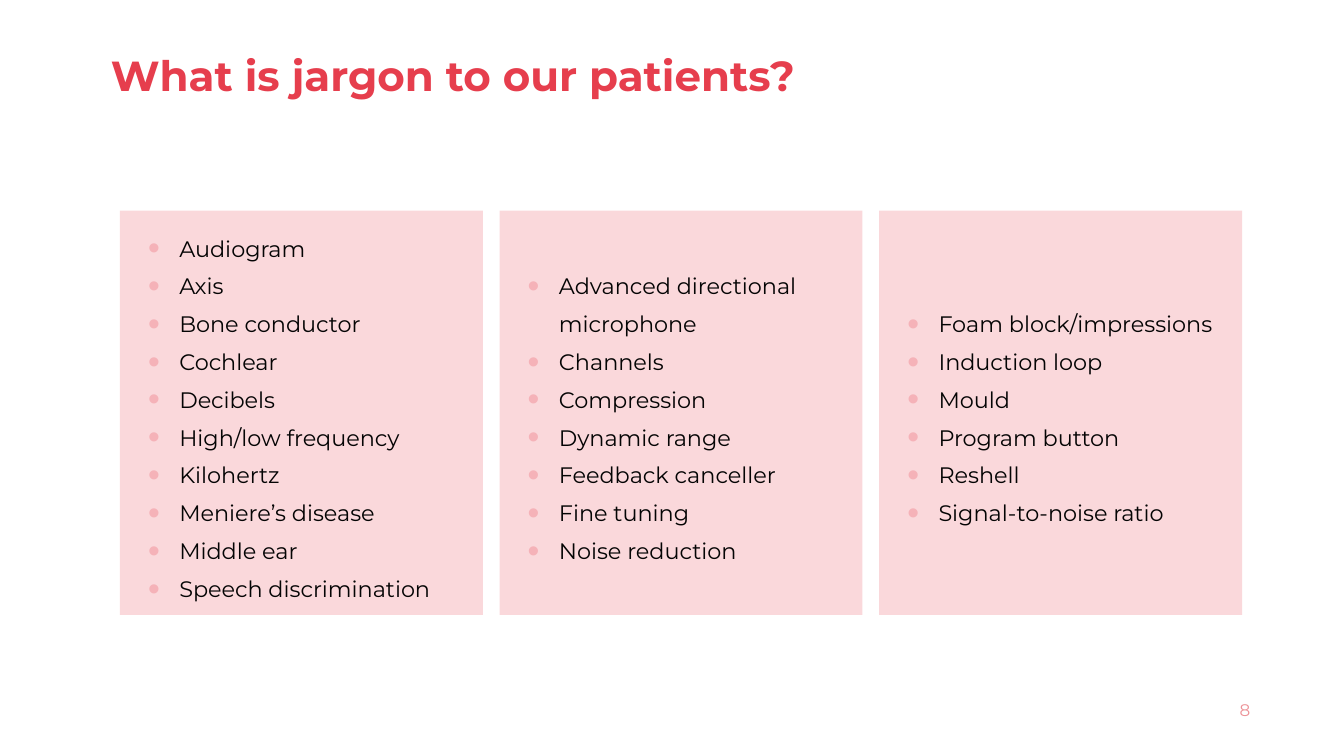
from dataclasses import dataclass
from lxml import etree
from pptx import Presentation
from pptx import util as u
from pptx.dml.color import RGBColor
from pptx.enum import shapes, text
from pptx.oxml.ns import qn


@dataclass(frozen=True)
class Theme:
    font: str = "Montserrat"
    red: str = "E63E4D"
    pink: str = "FAD8DB"
    dot: str = "F5B2B8"
    ink: str = "040404"
    page: str = "ED9297"
    head: int = 30
    body: int = 16
    foot: int = 12


@dataclass(frozen=True)
class Card:
    left: float
    terms: tuple[str, ...]


THEME = Theme()
LEFT, TOP, WIDE, HIGH, STEP = 1.19, 2.09, 3.6, 4.01, 3.765

LISTS = (
    ("Audiogram", "Axis", "Bone conductor", "Cochlear", "Decibels",
     "High/low frequency", "Kilohertz", "Meniere’s disease", "Middle ear",
     "Speech discrimination"),
    ("Advanced directional microphone", "Channels", "Compression",
     "Dynamic range", "Feedback canceller", "Fine tuning", "Noise reduction"),
    ("Foam block/impressions", "Induction loop", "Mould", "Program button",
     "Reshell", "Signal-to-noise ratio"),
)
CARDS = [Card(LEFT + i * STEP, terms) for i, terms in enumerate(LISTS)]


def style(para, size: int, color: str, align, bold: bool = False) -> None:
    para.alignment = align
    font = para.font
    font.name, font.size, font.bold = THEME.font, u.Pt(size), bold
    font.color.rgb = RGBColor.from_string(color)


def bullet(para) -> None:
    props = para._p.get_or_add_pPr()
    props.set("marL", str(u.Inches(0.49)))
    props.set("indent", str(u.Inches(-0.31)))
    tint = etree.SubElement(props, qn("a:buClr"))
    etree.SubElement(tint, qn("a:srgbClr"), val=THEME.dot)
    etree.SubElement(props, qn("a:buSzPct"), val="150000")
    etree.SubElement(props, qn("a:buFont"), typeface="Arial")
    etree.SubElement(props, qn("a:buChar"), char="•")


def setup(frame) -> None:
    frame.word_wrap = True
    frame.auto_size = text.MSO_AUTO_SIZE.NONE
    frame.vertical_anchor = text.MSO_ANCHOR.MIDDLE


def add_title(slide, words: str) -> None:
    title = slide.shapes.title
    title.left, title.top = u.Inches(1), u.Inches(0.46)
    title.width, title.height = u.Inches(11.5), u.Inches(0.63)
    setup(title.text_frame)
    title.text_frame.text = words
    para = title.text_frame.paragraphs[0]
    para.line_spacing = 0.9
    style(para, THEME.head, THEME.red, text.PP_ALIGN.LEFT, True)


def add_card(slide, card: Card) -> None:
    box = slide.shapes.add_shape(
        shapes.MSO_SHAPE.RECTANGLE, u.Inches(card.left), u.Inches(TOP),
        u.Inches(WIDE), u.Inches(HIGH))
    box.shadow.inherit = False
    box.fill.solid()
    box.fill.fore_color.rgb = RGBColor.from_string(THEME.pink)
    box.line.fill.background()
    setup(box.text_frame)
    box.text_frame.text = "\n".join(card.terms)
    for para in box.text_frame.paragraphs:
        bullet(para)
        para.line_spacing = u.Pt(27)
        style(para, THEME.body, THEME.ink, text.PP_ALIGN.LEFT)


def add_page(slide, label: str) -> None:
    box = slide.shapes.add_textbox(
        u.Inches(9.5), u.Inches(6.84), u.Inches(3), u.Inches(0.4))
    setup(box.text_frame)
    box.text_frame.text = label
    style(box.text_frame.paragraphs[0], THEME.foot, THEME.page,
          text.PP_ALIGN.RIGHT)


def main() -> None:
    deck = Presentation()
    deck.slide_width, deck.slide_height = u.Inches(13.33), u.Inches(7.5)
    slide = deck.slides.add_slide(deck.slide_layouts[5])
    add_title(slide, "What is jargon to our patients?")
    for card in CARDS:
        add_card(slide, card)
    add_page(slide, "8")
    deck.save("out.pptx")


if __name__ == "__main__":
    main()
